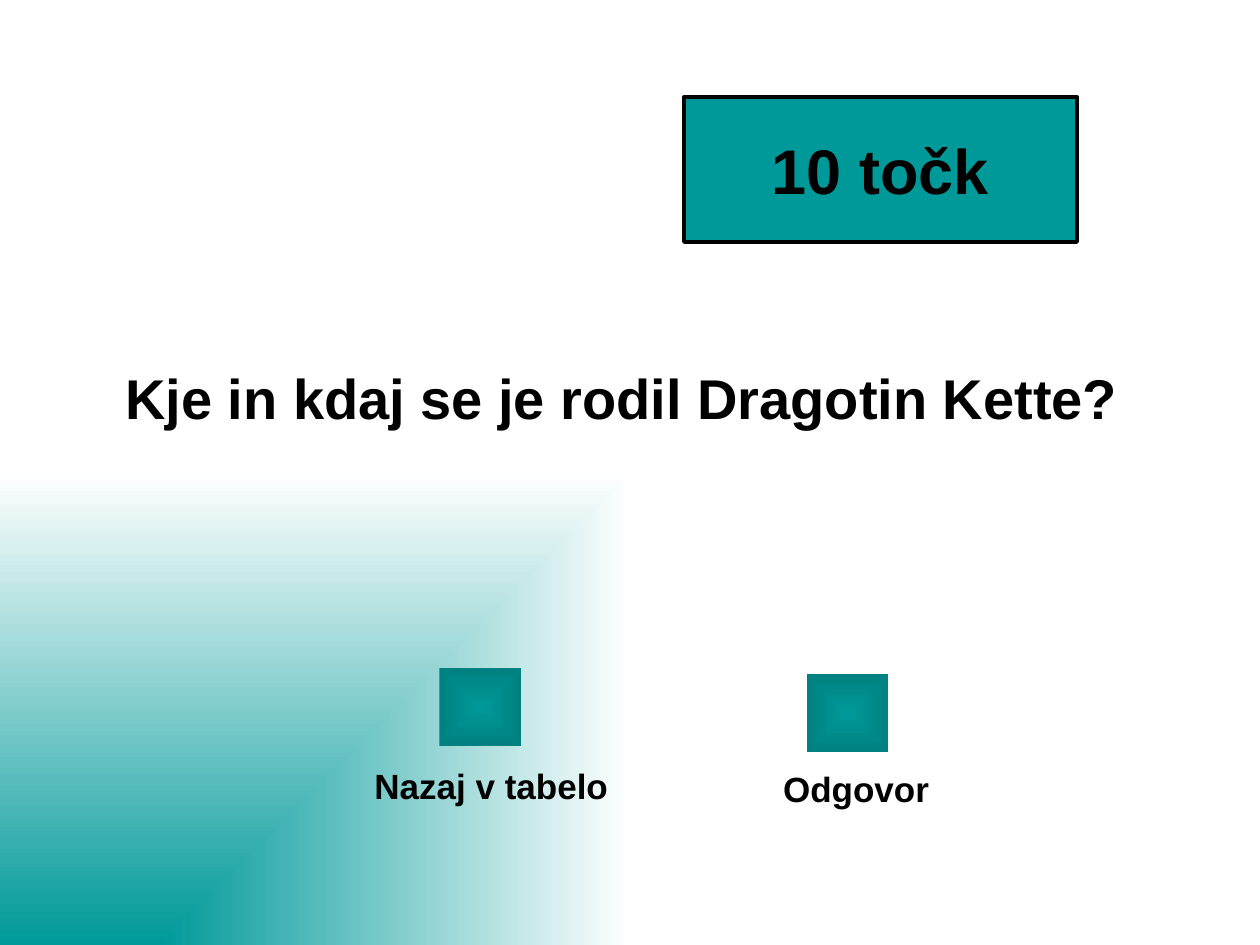
from dataclasses import dataclass

from lxml import etree
from pptx import Presentation
from pptx.dml.color import RGBColor
from pptx.enum.shapes import MSO_SHAPE
from pptx.enum.text import MSO_ANCHOR, PP_ALIGN
from pptx.oxml.ns import qn
from pptx.util import Cm, Pt

RECT = MSO_SHAPE.RECTANGLE
BUTTON = MSO_SHAPE.ACTION_BUTTON_CUSTOM
MIDDLE = MSO_ANCHOR.MIDDLE
CENTER = PP_ALIGN.CENTER

TEAL, DARK_TEAL, WHITE, BLACK = "009999", "008080", "FFFFFF", "000000"
BUTTON_W, BUTTON_H = Cm(1.65), Cm(1.57)
LABEL_H = Cm(1.09)


@dataclass
class NavButton:
    label: str
    left: float
    top: float
    label_left: float
    label_top: float
    label_width: float


NAV_BUTTONS = [
    NavButton("Nazaj v tabelo", 8.86, 13.46, 6.96, 15.29, 5.89),
    NavButton("Odgovor", 16.26, 13.59, 14.81, 15.34, 4.9),
]


def rgb(color: str) -> RGBColor:
    return RGBColor.from_string(color)


def set_text(tf, text: str, size: int, wrap: bool = True, anchor=None) -> None:
    tf.word_wrap = wrap
    if anchor is not None:
        tf.vertical_anchor = anchor
    p = tf.paragraphs[0]
    p.alignment = CENTER
    r = p.add_run()
    r.text = text
    r.font.name = "Arial"
    r.font.size = Pt(size)
    r.font.bold = True
    r.font.color.rgb = rgb(BLACK)


def set_rect_gradient(fill, parent, colors: tuple, focus: dict) -> None:
    """Fill with a rectangular gradient that starts at the focus, in percent."""
    fill.gradient()
    for stop, color in zip(fill.gradient_stops, colors):
        stop.color.rgb = rgb(color)
    grad = next(parent.iter(qn("a:gradFill")))
    grad.remove(grad.find(qn("a:lin")))
    shade = etree.SubElement(grad, qn("a:path"), path="rect")
    etree.SubElement(shade, qn("a:fillToRect"),
                     {side: str(value * 1000) for side, value in focus.items()})


def add_nav_button(s, nav: NavButton) -> None:
    sp = s.shapes.add_shape(BUTTON, Cm(nav.left), Cm(nav.top), BUTTON_W, BUTTON_H)
    sp.shadow.inherit = False
    sp.line.fill.background()
    set_rect_gradient(sp.fill, sp.element, (TEAL, DARK_TEAL),
                      dict(l=50, t=50, r=50, b=50))
    label = s.shapes.add_textbox(Cm(nav.label_left), Cm(nav.label_top),
                                 Cm(nav.label_width), LABEL_H)
    set_text(label.text_frame, nav.label, 20)


def add_points(s, text: str) -> None:
    sp = s.shapes.add_shape(RECT, Cm(13.79), Cm(1.96), Cm(7.92), Cm(2.92))
    sp.shadow.inherit = False
    sp.fill.solid()
    sp.fill.fore_color.rgb = rgb(TEAL)
    sp.line.color.rgb = rgb(BLACK)
    sp.line.width = Pt(2.25)
    set_text(sp.text_frame, text, 36, wrap=False, anchor=MIDDLE)


def main() -> None:
    prs = Presentation()
    prs.slide_width, prs.slide_height = Cm(25.4), Cm(19.05)
    s = prs.slides.add_slide(prs.slide_layouts[5])
    set_rect_gradient(s.background.fill, s.element, (TEAL, WHITE),
                      dict(l=0, t=100, r=100, b=0))

    title = s.shapes.title
    title.left, title.top = Cm(1.93), Cm(7.21)
    title.width, title.height = Cm(21.23), Cm(1.6)
    set_text(title.text_frame, "Kje in kdaj se je rodil Dragotin Kette?", 32,
             anchor=MIDDLE)

    add_points(s, "10 točk")
    for nav in NAV_BUTTONS:
        add_nav_button(s, nav)
    prs.save("out.pptx")


if __name__ == "__main__":
    main()
